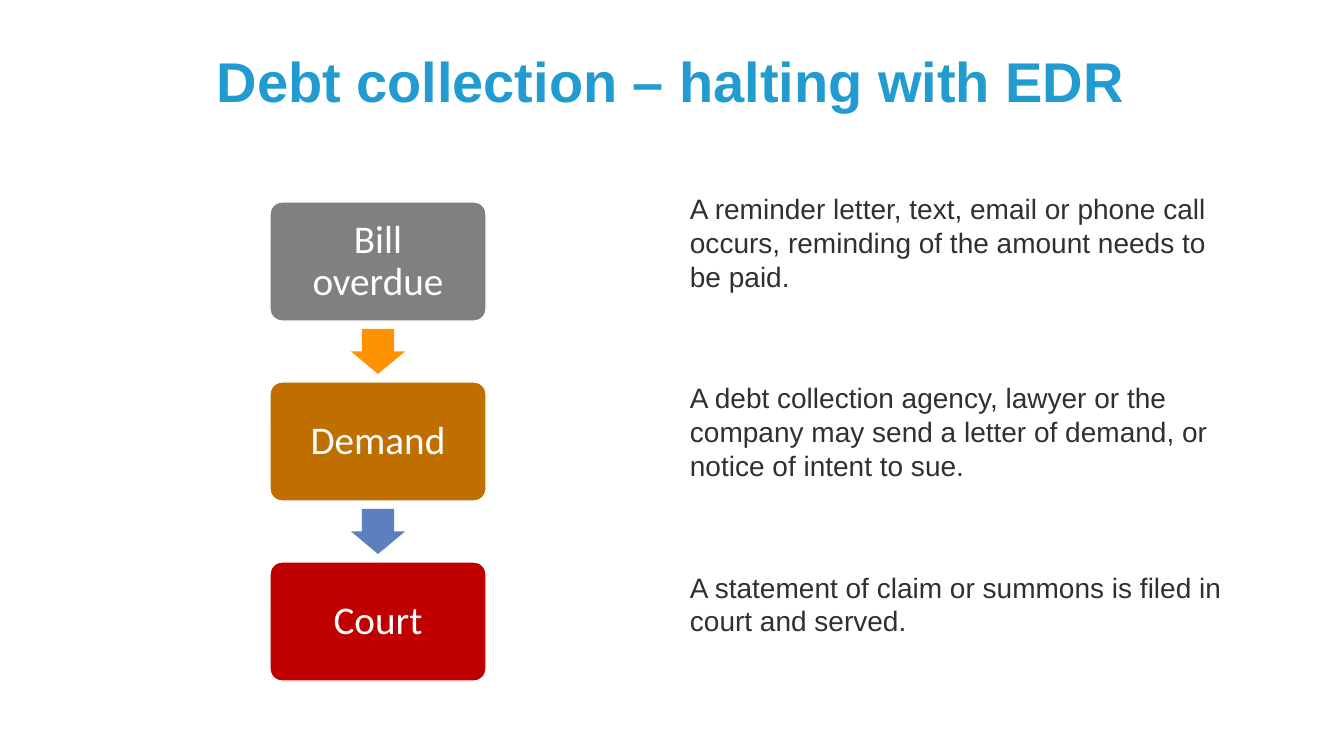
from pptx import Presentation
from pptx.dml.color import RGBColor
from pptx.enum.shapes import MSO_SHAPE
from pptx.enum.text import MSO_ANCHOR, PP_ALIGN
from pptx.util import Emu, Pt

EMU_PER_PX = 914400 / 100.8

COLORS = {
    "title": "229CD0",
    "body": "303030",
    "white": "FFFFFF",
    "overdue": "808080",
    "demand": "BF6E00",
    "court": "C00000",
    "to_demand": "FF9200",
    "to_court": "5D7FBE",
}

STEPS = [
    ("Bill overdue", "overdue"),
    ("Demand", "demand"),
    ("Court", "court"),
]
ARROWS = ["to_demand", "to_court"]
EXPLANATIONS = [
    "A reminder letter, text, email or phone call occurs, reminding of the amount needs to be paid.",
    "A debt collection agency, lawyer or the company may send a letter of demand, or notice of intent to sue.",
    "A statement of claim or summons is filed in court and served.",
]

STEP_LEFT, STEP_TOP, STEP_WIDTH, STEP_HEIGHT = 270, 202, 216, 119
STEP_PITCH = 180
STEP_INSET = 15
ARROW_WIDTH, ARROW_HEIGHT = 54, 45


def px(length):
    return Emu(round(length * EMU_PER_PX))


def color(name):
    return RGBColor.from_string(COLORS[name])


def format_paragraph(paragraph, font_name, size, color_name, bold=False):
    for run in paragraph.runs:
        run.font.name = font_name
        run.font.size = Pt(size)
        run.font.bold = bold
        run.font.color.rgb = color(color_name)


def add_filled_shape(slide, kind, box, fill, adjustments):
    shape = slide.shapes.add_shape(kind, *map(px, box))
    shape.shadow.inherit = False
    shape.fill.solid()
    shape.fill.fore_color.rgb = color(fill)
    shape.line.fill.background()
    for index, value in enumerate(adjustments):
        shape.adjustments[index] = value
    return shape


def add_text_box(slide, box, text):
    text_frame = slide.shapes.add_textbox(*map(px, box)).text_frame
    text_frame.word_wrap = True
    text_frame.text = text
    return text_frame


def add_title(slide, text):
    paragraph = add_text_box(slide, (103, 49, 1135, 98), text).paragraphs[0]
    paragraph.alignment = PP_ALIGN.CENTER
    paragraph.line_spacing = 0.9
    format_paragraph(paragraph, "Arial", 40, "title", bold=True)


def add_step(slide, top, label, fill):
    box = (STEP_LEFT, top, STEP_WIDTH, STEP_HEIGHT)
    shape = add_filled_shape(slide, MSO_SHAPE.ROUNDED_RECTANGLE, box, fill, [0.1])
    shape.line.color.rgb = color("white")
    shape.line.width = Pt(1)
    text_frame = shape.text_frame
    text_frame.word_wrap = True
    text_frame.vertical_anchor = MSO_ANCHOR.MIDDLE
    text_frame.margin_left = text_frame.margin_right = px(STEP_INSET)
    text_frame.margin_top = text_frame.margin_bottom = px(STEP_INSET)
    text_frame.text = label
    paragraph = text_frame.paragraphs[0]
    paragraph.alignment = PP_ALIGN.CENTER
    paragraph.line_spacing = 0.9
    format_paragraph(paragraph, "Calibri", 28, "white")


def add_arrow(slide, step_top, fill):
    """Centre a down arrow in the gap below the step that starts at step_top."""
    left = STEP_LEFT + (STEP_WIDTH - ARROW_WIDTH) // 2
    top = step_top + (STEP_HEIGHT + STEP_PITCH - ARROW_HEIGHT) // 2
    box = (left, top, ARROW_WIDTH, ARROW_HEIGHT)
    add_filled_shape(slide, MSO_SHAPE.DOWN_ARROW, box, fill, [0.6, 0.5])


def add_explanations(slide, texts):
    text_frame = add_text_box(slide, (680, 187, 572, 542), "\n".join(texts))
    for index, paragraph in enumerate(text_frame.paragraphs):
        paragraph.line_spacing = Pt(24)
        paragraph.space_before = Pt(63 if index else 0)
        format_paragraph(paragraph, "Arial", 20, "body")


def main():
    presentation = Presentation()
    presentation.slide_width = px(1344)
    presentation.slide_height = px(756)
    slide = presentation.slides.add_slide(presentation.slide_layouts[6])

    add_title(slide, "Debt collection – halting with EDR")
    tops = [STEP_TOP + index * STEP_PITCH for index in range(len(STEPS))]
    for top, (label, fill) in zip(tops, STEPS):
        add_step(slide, top, label, fill)
    for top, fill in zip(tops, ARROWS):
        add_arrow(slide, top, fill)
    add_explanations(slide, EXPLANATIONS)

    presentation.save("out.pptx")


if __name__ == "__main__":
    main()
